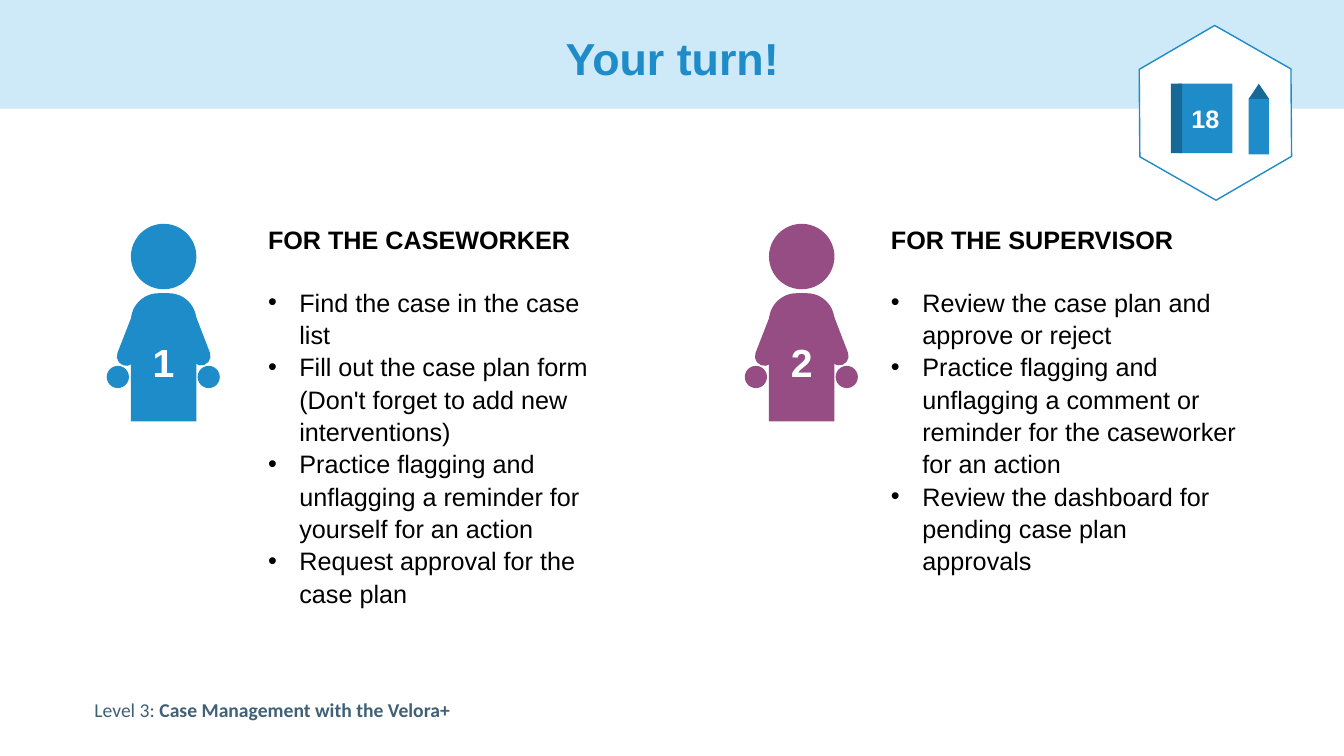
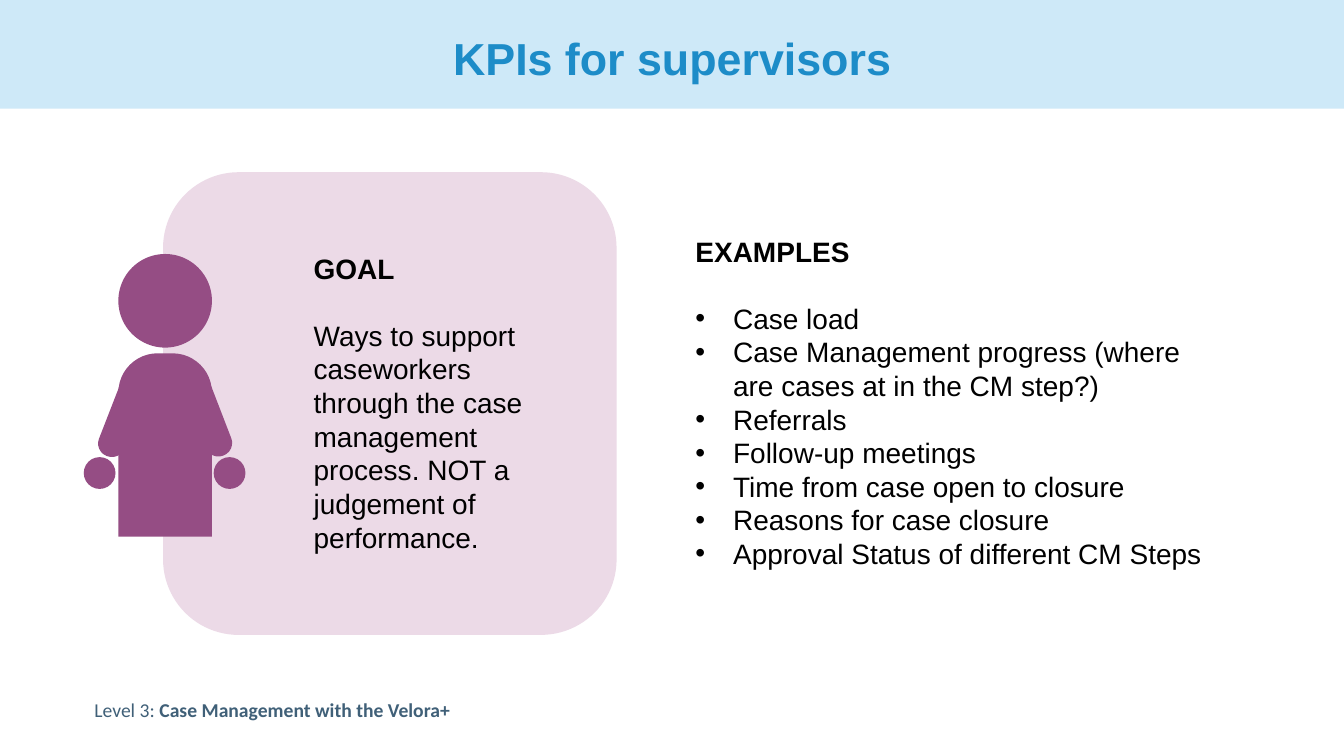
import pptx
import pptx.dml.color
import pptx.enum.shapes
import pptx.enum.text
import pptx.oxml.ns
import pptx.util
from lxml import etree

Cm = pptx.util.Cm
Pt = pptx.util.Pt
RGBColor = pptx.dml.color.RGBColor
SHAPE = pptx.enum.shapes.MSO_SHAPE
ALIGN = pptx.enum.text.PP_ALIGN
ANCHOR = pptx.enum.text.MSO_ANCHOR

BLUE = RGBColor(0x1D, 0x8C, 0xC8)
DARK_BLUE = RGBColor(0x16, 0x69, 0x96)
PALE_BLUE = RGBColor(0xCE, 0xE9, 0xF8)
PLUM = RGBColor(0x95, 0x4D, 0x84)
PALE_PLUM = RGBColor(0xEC, 0xDA, 0xE7)
SLATE = RGBColor(0x40, 0x60, 0x78)
BLACK = RGBColor(0, 0, 0)
WHITE = RGBColor(0xFF, 0xFF, 0xFF)

TITLE = {"name": "Arial", "size": Pt(32), "bold": True}
NUMBER = {"name": "Arial", "size": Pt(28), "bold": True}
BADGE = {"name": "Arial", "size": Pt(18), "bold": True}
FOOTER = {"name": "Calibri", "size": Pt(14), "bold": False}


def write(para, text, font_format, colour):
    span = para.add_run()
    span.text = text
    for name, value in font_format.items():
        setattr(span.font, name, value)
    span.font.color.rgb = colour


def add_part(shapes, kind, place, fill, label="", font_format=None):
    part = shapes.add_shape(kind, *[Cm(length) for length in place])
    part.shadow.inherit = False
    part.fill.solid()
    part.fill.fore_color.rgb = fill
    part.line.fill.background()
    if label:
        part.text_frame.vertical_anchor = ANCHOR.MIDDLE
        para = part.text_frame.paragraphs[0]
        para.alignment = ALIGN.CENTER
        write(para, label, font_format, WHITE)
    return part


deck = pptx.Presentation()
deck.slide_width = Cm(33.87)
deck.slide_height = Cm(19.05)

# Layout: title and two text blocks, without the unused footer fields
layout = deck.slide_layouts.get_by_name("Two Content")
for holder in list(layout.placeholders)[3:]:
    holder.element.getparent().remove(holder.element)
title_place = {"left": Cm(2.34), "top": Cm(0.33), "width": Cm(29.21), "height": Cm(2.41)}
for name, value in title_place.items():
    setattr(layout.placeholders[0], name, value)

# Text of the slides: place in cm, heading, list items
pages = [
    {
        "title": "Your turn!",
        "size": 18, "spacing": 1.07, "gap": 22, "indent": 0.79,
        "blocks": [
            ((6.5, 5.46, 9.3, 10.08), "FOR THE CASEWORKER", True, [
                "Find the case in the case list",
                "Fill out the case plan form (Don't forget to add new interventions)",
                "Practice flagging and unflagging a reminder for yourself for an action",
                "Request approval for the case plan",
            ]),
            ((22.2, 5.46, 9.3, 9.25), "FOR THE SUPERVISOR", True, [
                "Review the case plan and approve or reject",
                "Practice flagging and unflagging a comment or reminder for the caseworker for an action",
                "Review the dashboard for pending case plan approvals",
            ]),
        ],
        # left, top, scale, colour, number
        "people": [(2.69, 5.64, 1, BLUE, "1"), (18.77, 5.64, 1, PLUM, "2")],
    },
    {
        "title": "KPIs for supervisors",
        "size": 20, "spacing": 1.0, "gap": 24, "indent": 0.95,
        "blocks": [
            ((7.65, 6.2, 6.38, 7.95), "GOAL", False, [
                "Ways to support caseworkers through the case management process. "
                "NOT a judgement of performance.",
            ]),
            ((17.27, 5.77, 13.46, 8.81), "EXAMPLES", True, [
                "Case load",
                "Case Management progress (where are cases at in the CM step?)",
                "Referrals",
                "Follow-up meetings",
                "Time from case open to closure",
                "Reasons for case closure",
                "Approval Status of different CM Steps",
            ]),
        ],
        "people": [(2.11, 6.4, 1.43, PLUM, "")],
    },
]

# Parts of a person: shape, place in cm, rotation
person_parts = [
    (SHAPE.ROUND_2_SAME_RECTANGLE, (0.61, 1.75, 1.65, 3.23), 0),
    (SHAPE.OVAL, (0.61, 0, 1.65, 1.65), 0),
    (SHAPE.ROUND_2_SAME_RECTANGLE, (0.43, 2.16, 0.48, 1.45), 201.3),
    (SHAPE.OVAL, (0, 3.58, 0.56, 0.56), 0),
    (SHAPE.ROUND_2_SAME_RECTANGLE, (1.96, 2.15, 0.48, 1.45), 158.9),
    (SHAPE.OVAL, (2.29, 3.58, 0.56, 0.56), 0),
]

for content in pages:
    page = deck.slides.add_slide(layout)
    title, *bodies = page.placeholders

    # Title
    title.text_frame.vertical_anchor = ANCHOR.MIDDLE
    para = title.text_frame.paragraphs[0]
    para.alignment = ALIGN.CENTER
    para.line_spacing = 0.9
    write(para, content["title"], TITLE, BLUE)

    # Heading and list in each body placeholder
    for body, (place, heading, bulleted, items) in zip(bodies, content["blocks"]):
        for name, length in zip(("left", "top", "width", "height"), place):
            setattr(body, name, Cm(length))
        frame = body.text_frame
        frame.auto_size = pptx.enum.text.MSO_AUTO_SIZE.NONE
        frame.vertical_anchor = ANCHOR.TOP
        for index, text in enumerate([heading] + items):
            para = frame.add_paragraph() if index else frame.paragraphs[0]
            para.line_spacing = content["spacing"]
            para.space_before = Pt(content["gap"] if index == 1 else 0)
            font_format = {"name": "Arial", "size": Pt(content["size"]), "bold": index == 0}
            write(para, text, font_format, BLACK)
            has_bullet = bulleted and index > 0
            indent = Cm(content["indent"]) if has_bullet else 0
            properties = para._p.get_or_add_pPr()
            properties.set("marL", str(indent))
            properties.set("indent", str(-indent))
            tag = "a:buChar" if has_bullet else "a:buNone"
            bullet = etree.SubElement(properties, pptx.oxml.ns.qn(tag))
            if has_bullet:
                bullet.set("char", "•")

    # People
    for left, top, scale, colour, number in content["people"]:
        person = page.shapes.add_group_shape()
        for index, (kind, (x, y, width, height), rotation) in enumerate(person_parts):
            place = (left + x * scale, top + y * scale, width * scale, height * scale)
            label = number if index == 0 else ""
            part = add_part(person.shapes, kind, place, colour, label, NUMBER)
            part.rotation = rotation
            if kind == SHAPE.ROUND_2_SAME_RECTANGLE:
                part.adjustments[0] = 0.49 if rotation else 0.42

first_page, second_page = deck.slides

# Workbook badge on the first slide
badge = first_page.shapes.add_group_shape()
hexagon = add_part(badge.shapes, SHAPE.HEXAGON, (28.42, 0.94, 4.42, 3.81), WHITE)
hexagon.adjustments[0] = 0.29
hexagon.rotation = 29.7
hexagon.line.color.rgb = BLUE
hexagon.line.width = Pt(1)
add_part(badge.shapes, SHAPE.RECTANGLE, (29.69, 2.11, 1.37, 1.75), BLUE, "18", BADGE)
add_part(badge.shapes, SHAPE.RECTANGLE, (29.51, 2.11, 0.28, 1.75), DARK_BLUE)
add_part(badge.shapes, SHAPE.ISOSCELES_TRIANGLE, (31.47, 2.11, 0.51, 0.38), DARK_BLUE)
add_part(badge.shapes, SHAPE.RECTANGLE, (31.47, 2.49, 0.51, 1.4), BLUE)

# Goal panel at the back of the second slide
panel = add_part(second_page.shapes, SHAPE.ROUNDED_RECTANGLE, (4.11, 4.34, 11.43, 11.66), PALE_PLUM)
second_page.shapes.element.insert(2, panel.element)

# Band and footer, moved to the layout so that both slides share them
band = add_part(first_page.shapes, SHAPE.RECTANGLE, (0, 0, 33.87, 2.74), PALE_BLUE)
footer = first_page.shapes.add_textbox(Cm(2.13), Cm(17.45), Cm(11.56), Cm(0.86))
footer.text_frame.word_wrap = True
para = footer.text_frame.paragraphs[0]
write(para, "Level 3: ", FOOTER, SLATE)
write(para, "Case Management with the Velora+", {**FOOTER, "bold": True}, SLATE)
for index, box in enumerate((band, footer)):
    layout.shapes.element.insert(2 + index, box.element)

deck.save("out.pptx")
